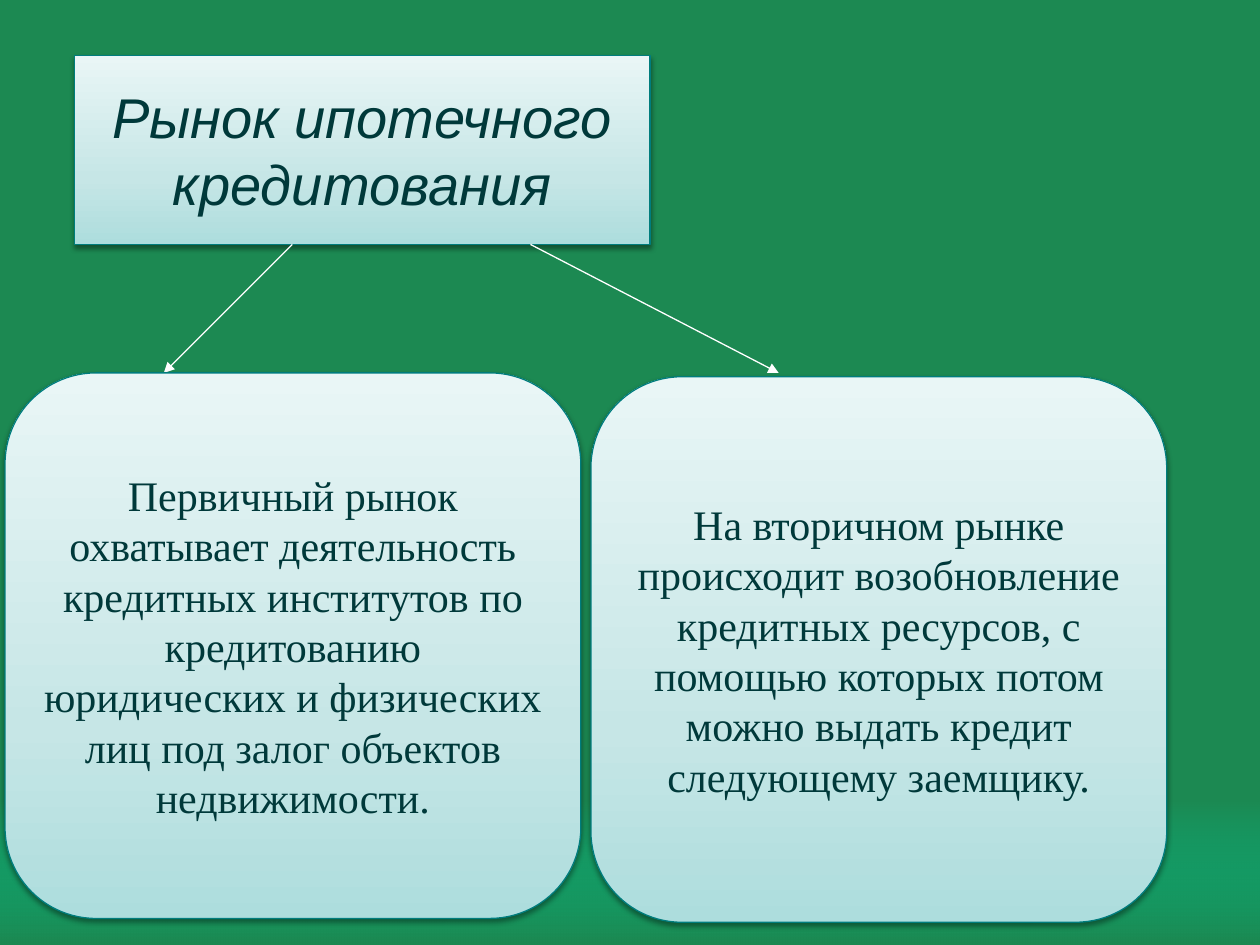
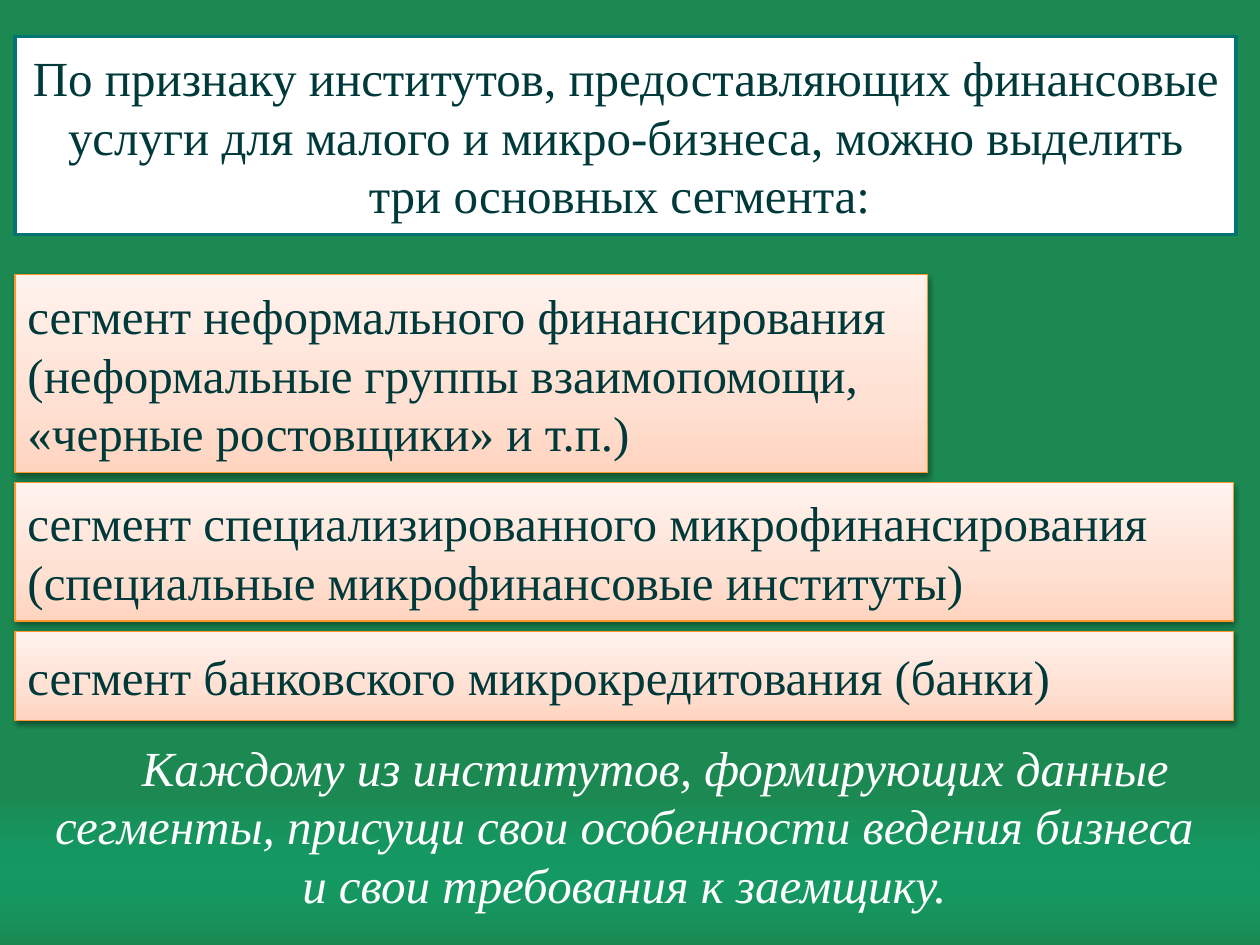
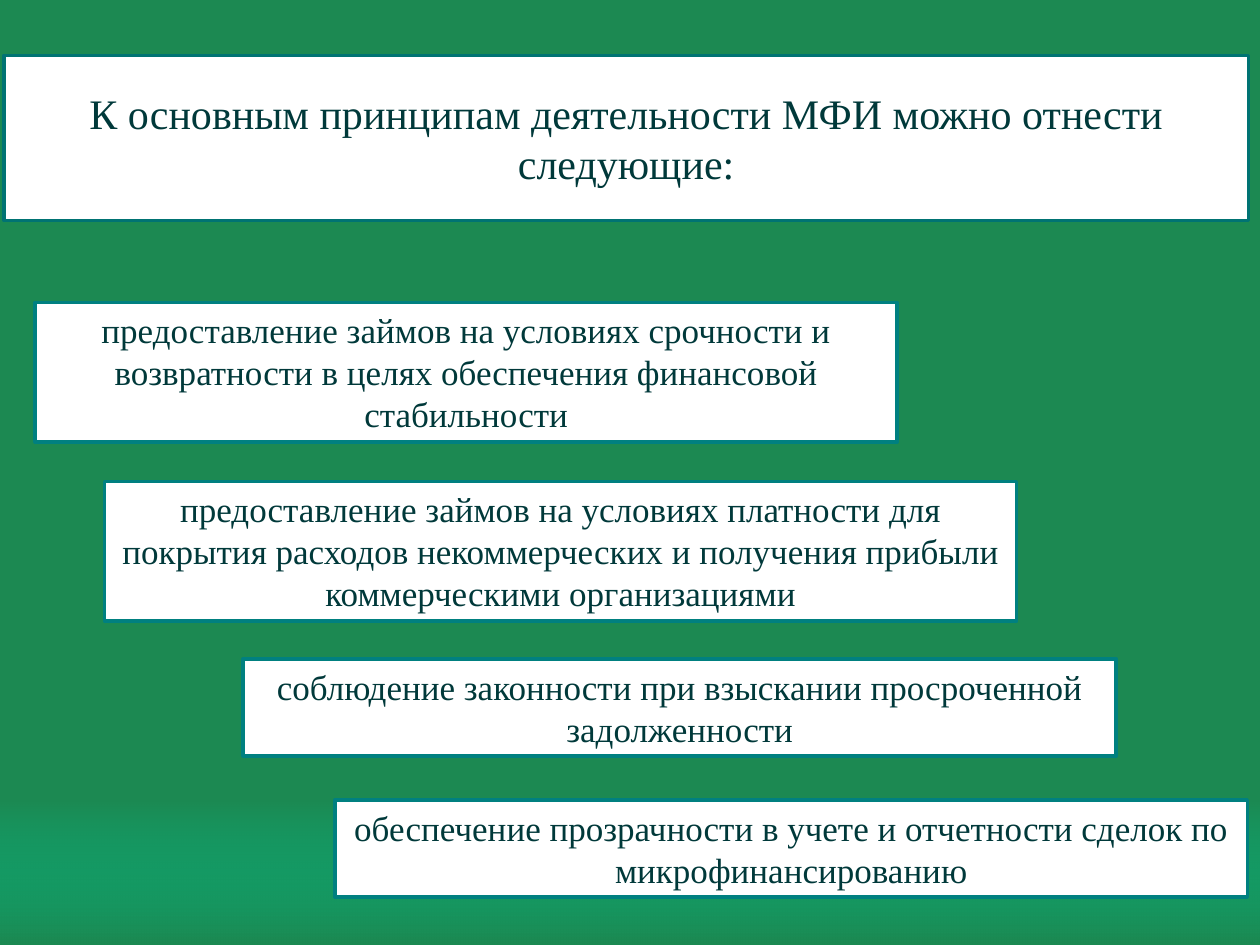
"""Build three slides on mortgage lending and microfinance."""
from pptx import Presentation
from pptx.dml.color import RGBColor
from pptx.enum import shapes, text
from pptx.oxml import ns, parse_xml
from pptx.util import Inches, Pt

GREEN = RGBColor(0x1C, 0x89, 0x52)
MINT = RGBColor(0x00, 0xCC, 0x99)
INK = RGBColor(0x00, 0x39, 0x3A)
WHITE = RGBColor(0xFF, 0xFF, 0xFF)
TEAL = RGBColor(0x00, 0x7D, 0x7D)
DEEP = RGBColor(0x00, 0x73, 0x73)
EDGE = RGBColor(0x00, 0x80, 0x80)
ORANGE = RGBColor(0xFE, 0x96, 0x2D)
AQUA = [(0, RGBColor(0xAD, 0xDD, 0xDD), 100), (35, RGBColor(0xC6, 0xE6, 0xE6), 100),
        (100, RGBColor(0xE9, 0xF6, 0xF6), 100)]
PEACH = [(0, RGBColor(0xFF, 0xD4, 0xBF), 100), (35, RGBColor(0xFF, 0xE0, 0xD2), 100),
         (100, RGBColor(0xFF, 0xF3, 0xEE), 100)]
GLOW = [(0, MINT, 0), (100, GREEN, 100)]
SERIF, SANS = "Times New Roman", "Arial"
KIND = shapes.MSO_SHAPE
MID, TOP = text.MSO_ANCHOR.MIDDLE, text.MSO_ANCHOR.TOP
LEFT, MIDST = text.PP_ALIGN.LEFT, text.PP_ALIGN.CENTER
FIXED, GROW = text.MSO_AUTO_SIZE.NONE, text.MSO_AUTO_SIZE.SHAPE_TO_FIT_TEXT

MARKET = "Рынок ипотечного кредитования"
PARTS = [
    ((0.04, 2.96), "Первичный рынок охватывает деятельность кредитных институтов по "
     "кредитованию юридических и физических лиц под залог объектов недвижимости."),
    ((4.69, 2.99), "На вторичном рынке происходит возобновление кредитных ресурсов, "
     "с помощью которых потом можно выдать кредит следующему заемщику."),
]
ARROWS = [((4.21, 1.94), (6.18, 2.96)), ((2.32, 1.94), (1.3, 2.96))]

SECTOR = ("По признаку институтов, предоставляющих финансовые услуги для малого и "
          "микро-бизнеса, можно выделить три основных сегмента: ")
SEGMENTS = [
    (7.24, 1.57, "сегмент неформального финансирования (неформальные группы "
     "взаимопомощи, «черные ростовщики» и т.п.)"),
    (9.67, 1.1, "сегмент специализированного микрофинансирования "
     "(специальные микрофинансовые институты)"),
    (9.67, 0.71, "сегмент банковского микрокредитования (банки)"),
]
CLOSING = ("Каждому из институтов, формирующих данные сегменты, присущи свои "
           "особенности ведения бизнеса и свои требования к заемщику.")

BASIS = "К основным принципам деятельности МФИ можно отнести следующие:"
RULES = [
    ((0.28, 2.4, 6.84, 1.11), "предоставление займов на условиях срочности и "
     "возвратности в целях обеспечения финансовой стабильности"),
    ((0.83, 3.82, 7.24, 1.11), "предоставление займов на условиях платности для покрытия "
     "расходов некоммерческих и получения прибыли коммерческими организациями"),
    ((1.93, 5.23, 6.93, 0.77), "соблюдение законности при взыскании просроченной "
     "задолженности"),
    ((2.66, 6.35, 7.24, 0.77), "обеспечение прозрачности в учете и отчетности сделок по "
     "микрофинансированию"),
]


def node(tag, attrs="", inner=""):
    return parse_xml(f'<a:{tag} {ns.nsdecls("a")} {attrs}>{inner}</a:{tag}>')


def blend(shape, stops, angle):
    marks = "".join(
        f'<a:gs pos="{at * 1000}"><a:srgbClr val="{tone}">'
        f'<a:alpha val="{alpha * 1000}"/></a:srgbClr></a:gs>'
        for at, tone, alpha in stops)
    inner = f'<a:gsLst>{marks}</a:gsLst><a:lin ang="{angle * 60000}" scaled="0"/>'
    shape._element.spPr.insert(2, node("gradFill", 'rotWithShape="1"', inner))


def paint(shape, fill, edge, width):
    shape.line.color.rgb = edge
    shape.line.width = Pt(width)
    shape.shadow.inherit = False
    if fill == WHITE:
        shape.fill.solid()
        shape.fill.fore_color.rgb = fill
        return
    blend(shape, fill, 270)
    glow = shape._element.spPr.find(ns.qn("a:effectLst"))
    glow.append(node("outerShdw", f'blurRad="{Pt(3.1)}" dist="{Pt(1.6)}" dir="5400000" '
                     'rotWithShape="0"',
                     '<a:srgbClr val="000000"><a:alpha val="38000"/></a:srgbClr>'))


def write(shape, words, size, face=SERIF, tone=INK, slant=False, align=MIDST,
          anchor=MID, fit=FIXED):
    frame = shape.text_frame
    frame.text = words
    frame.word_wrap = True
    frame.auto_size = fit
    frame.vertical_anchor = anchor
    para = frame.paragraphs[0]
    para.alignment = align
    font = para.runs[0].font
    font.name, font.size, font.italic = face, Pt(size), slant
    font.color.rgb = tone


def box(slide, kind, at):
    return slide.shapes.add_shape(kind, *map(Inches, at))


def head(slide, form, at):
    title = slide.shapes.title
    title.left, title.top, title.width, title.height = map(Inches, at)
    title._element.spPr.insert(1, node("prstGeom", f'prst="{form}"', "<a:avLst/>"))
    return title


def arrow(slide, start, end):
    line = slide.shapes.add_connector(shapes.MSO_CONNECTOR.STRAIGHT,
                                      *map(Inches, start + end))
    line.line.color.rgb = WHITE
    line.line.width = Pt(0.75)
    line.line._get_or_add_ln().append(node("tailEnd", 'type="triangle"'))
    line._element.spPr.append(node("effectLst"))


def base(deck, slide):
    master = deck.slide_master
    master.background.fill.solid()
    master.background.fill.fore_color.rgb = GREEN
    band = box(slide, KIND.RECTANGLE, (0, 6.35, 10, 1.15))
    blend(band, GLOW, 90)
    band.line.fill.background()
    band.shadow.inherit = False
    band._element.nvSpPr.cNvPr.set("id", "99")
    master.shapes._spTree.insert(2, band._element)


def market(slide):
    title = head(slide, "roundRect", (0.59, 0.44, 4.57, 1.5))
    paint(title, AQUA, TEAL, 0.75)
    write(title, MARKET, 32, SANS, slant=True)
    for ends in ARROWS:
        arrow(slide, *ends)
    for spot, words in PARTS:
        card = box(slide, KIND.ROUNDED_RECTANGLE, spot + (4.57, 4.33))
        paint(card, AQUA, TEAL, 0.75)
        write(card, words, 24)


def sector(slide):
    title = head(slide, "round2DiagRect", (0.12, 0.29, 9.69, 1.57))
    paint(title, WHITE, DEEP, 2)
    write(title, SECTOR, 28)
    top, gap = 2.18, 0.08
    for width, height, words in SEGMENTS:
        bar = box(slide, KIND.RECTANGLE, (0.12, top, width, height))
        paint(bar, PEACH, ORANGE, 0.75)
        write(bar, words, 28, align=LEFT)
        top += height + gap
    note = slide.shapes.add_textbox(*map(Inches, (0.32, 5.8, 9.27, 1.51)))
    write(note, CLOSING, 28, tone=WHITE, slant=True, anchor=TOP, fit=GROW)
    props = note.text_frame.paragraphs[0]._p.get_or_add_pPr()
    props.set("indent", str(Inches(0.49)))


def basis(slide):
    title = head(slide, "flowChartPreparation", (0.03, 0.44, 9.88, 1.31))
    paint(title, WHITE, DEEP, 2)
    write(title, BASIS, 24)
    for at, words in RULES:
        step = box(slide, KIND.RECTANGLE, at)
        paint(step, WHITE, EDGE, 2)
        write(step, words, 20, anchor=TOP, fit=GROW)


def main():
    deck = Presentation()
    deck.slide_width, deck.slide_height = Inches(10), Inches(7.5)
    layout = deck.slide_layouts.get_by_name("Title Only")
    pages = [deck.slides.add_slide(layout) for _ in range(3)]
    base(deck, pages[0])
    for build, page in zip((market, sector, basis), pages):
        build(page)
    deck.save("out.pptx")


if __name__ == "__main__":
    main()
